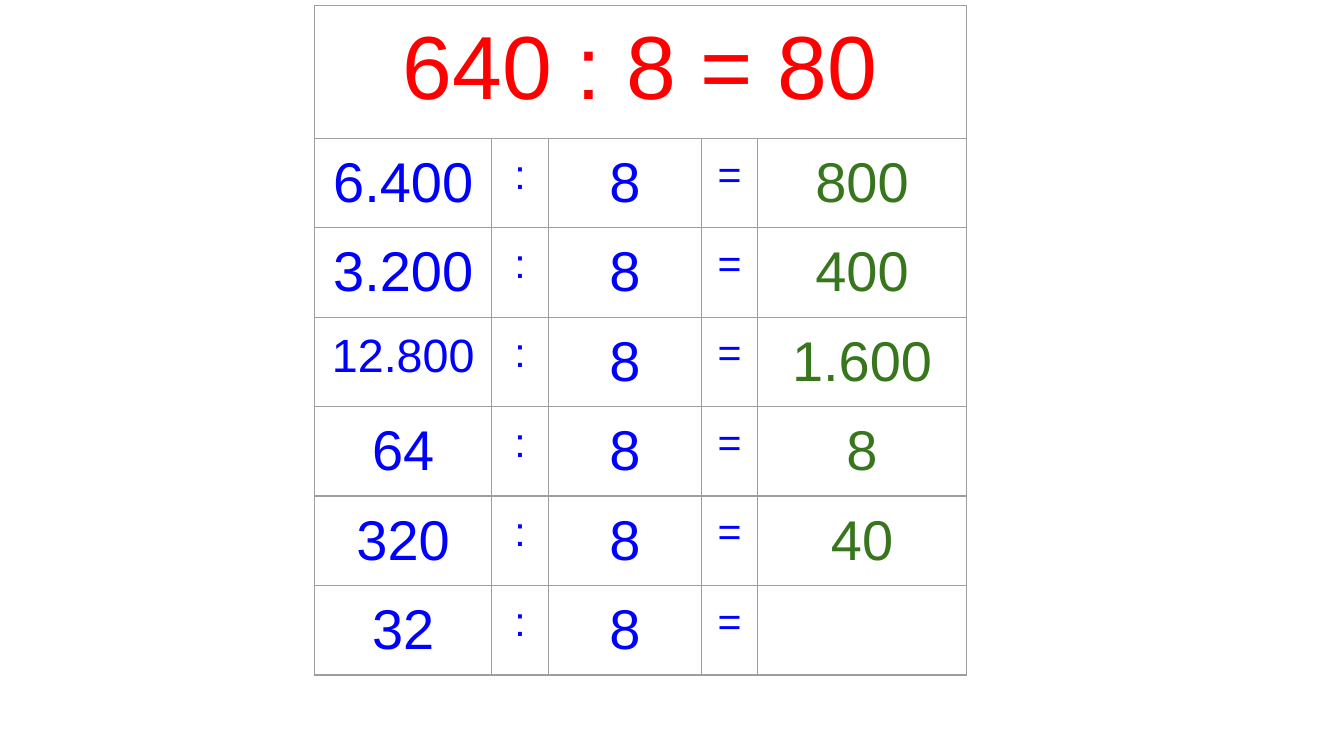
from dataclasses import dataclass

from lxml import etree
from pptx import Presentation
from pptx.dml.color import RGBColor
from pptx.enum.text import PP_ALIGN
from pptx.oxml.ns import qn
from pptx.util import Inches, Pt

CENTER = PP_ALIGN.CENTER
BORDER_TAGS = ("a:lnL", "a:lnR", "a:lnT", "a:lnB")


@dataclass(frozen=True)
class Theme:
    """Colours, type sizes and line widths of the slide."""

    font: str = "Arial"
    title: str = "FF0000"
    question: str = "0000FF"
    answer: str = "38761D"
    border: str = "9E9E9E"
    border_width: float = 0.75
    title_size: int = 48
    number_size: int = 30
    long_number_size: int = 25
    sign_size: int = 22


THEME = Theme()
TITLE = "640 : 8 = 80"
DIVISOR = "8"
DIVISIONS = [
    ("6.400", "800"),
    ("3.200", "400"),
    ("12.800", "1.600"),
    ("64", "8"),
    ("320", "40"),
    ("32", ""),
]
COLUMN_WIDTHS = (1.32, 0.42, 1.14, 0.42, 1.55)
TITLE_HEIGHT = 0.99
ROW_HEIGHT = 0.61
PADDING = 0.1


def style_cell(cell):
    """Give a cell its padding, thin border and clear background."""
    cell.margin_left = cell.margin_right = Inches(PADDING)
    cell.margin_top = cell.margin_bottom = Inches(PADDING)
    properties = cell._tc.get_or_add_tcPr()
    for tag in BORDER_TAGS:
        line = etree.SubElement(properties, qn(tag), w=str(Pt(THEME.border_width)))
        fill = etree.SubElement(line, qn("a:solidFill"))
        etree.SubElement(fill, qn("a:srgbClr"), val=THEME.border)
    cell.fill.background()


def write_cell(cell, text, size, color):
    """Write centred text in a cell."""
    para = cell.text_frame.paragraphs[0]
    para.text = text
    para.alignment = CENTER
    for span in para.runs:
        span.font.name = THEME.font
        span.font.size = Pt(size)
        span.font.color.rgb = RGBColor.from_string(color)


def add_division_table(page, left, top):
    """Place the title row and one row for each division."""
    width = sum(COLUMN_WIDTHS)
    height = TITLE_HEIGHT + ROW_HEIGHT * len(DIVISIONS)
    frame = page.shapes.add_table(
        len(DIVISIONS) + 1, len(COLUMN_WIDTHS),
        Inches(left), Inches(top), Inches(width), Inches(height),
    )
    table = frame.table
    table.first_row = table.horz_banding = False
    for column, column_width in zip(table.columns, COLUMN_WIDTHS):
        column.width = Inches(column_width)
    for row in table.rows:
        row.height = Inches(ROW_HEIGHT)
    table.rows[0].height = Inches(TITLE_HEIGHT)
    for cell in table.iter_cells():
        style_cell(cell)

    table.cell(0, 0).merge(table.cell(0, len(COLUMN_WIDTHS) - 1))
    write_cell(table.cell(0, 0), TITLE, THEME.title_size, THEME.title)
    for row_index, (dividend, quotient) in enumerate(DIVISIONS, start=1):
        is_long = len(dividend) > 5
        dividend_size = THEME.long_number_size if is_long else THEME.number_size
        entries = [
            (dividend, dividend_size, THEME.question),
            (":", THEME.sign_size, THEME.question),
            (DIVISOR, THEME.number_size, THEME.question),
            ("=", THEME.sign_size, THEME.question),
            (quotient, THEME.number_size, THEME.answer),
        ]
        for column_index, entry in enumerate(entries):
            write_cell(table.cell(row_index, column_index), *entry)


def main():
    """Build and save the deck."""
    deck = Presentation()
    deck.slide_width = Inches(10)
    deck.slide_height = deck.slide_width * 9 // 16
    page = deck.slides.add_slide(deck.slide_layouts[6])
    add_division_table(page, 2.34, 0.04)
    deck.save("out.pptx")


if __name__ == "__main__":
    main()
